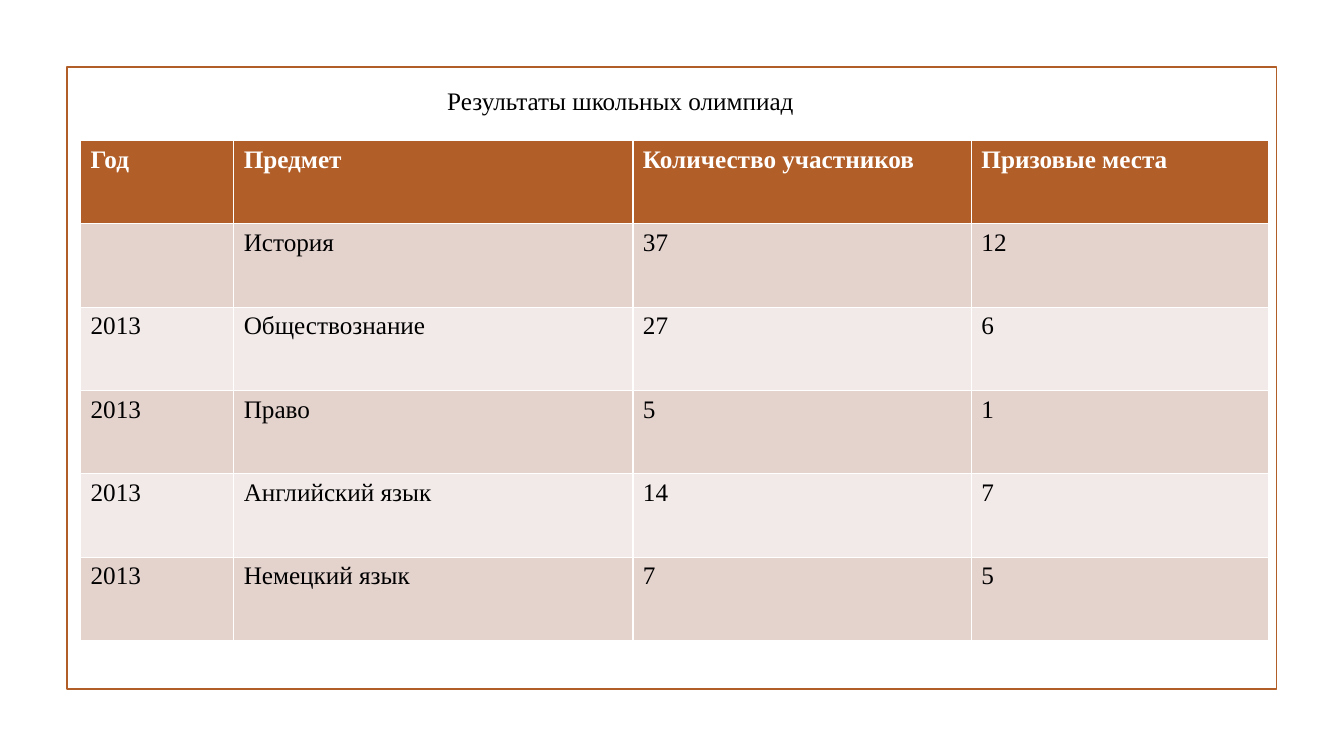
from dataclasses import dataclass

from pptx import Presentation
from pptx.dml.color import RGBColor
from pptx.enum.shapes import MSO_SHAPE
from pptx.enum.text import MSO_ANCHOR, MSO_AUTO_SIZE, PP_ALIGN
from pptx.util import Cm, Pt

RECTANGLE = MSO_SHAPE.RECTANGLE
LEFT = PP_ALIGN.LEFT
TOP = MSO_ANCHOR.TOP
FIT_SHAPE = MSO_AUTO_SIZE.SHAPE_TO_FIT_TEXT
TITLE_ONLY = 5


@dataclass(frozen=True)
class Theme:
    font: str = "Times New Roman"
    text_size: Pt = Pt(18)
    frame_width: Pt = Pt(1.25)
    accent: RGBColor = RGBColor(0xB1, 0x5E, 0x28)
    dark_band: RGBColor = RGBColor(0xE4, 0xD2, 0xCD)
    light_band: RGBColor = RGBColor(0xF2, 0xEA, 0xE8)
    text: RGBColor = RGBColor(0x00, 0x00, 0x00)
    header_text: RGBColor = RGBColor(0xFF, 0xFF, 0xFF)


THEME = Theme()

TITLE = "Результаты школьных олимпиад"
COLUMN_WIDTHS = [3.86, 10.06, 8.53, 7.49]
ROW_HEIGHT = 2.1
RESULTS = [
    ["Год", "Предмет", "Количество участников", "Призовые места"],
    ["", "История", "37", "12"],
    ["2013", "Обществознание", "27", "6"],
    ["2013", "Право", "5", "1"],
    ["2013", "Английский язык", "14", "7"],
    ["2013", "Немецкий язык", "7", "5"],
]


def add_text(paragraph, text, color, bold=False):
    run = paragraph.add_run()
    run.text = text
    run.font.name = THEME.font
    run.font.size = THEME.text_size
    run.font.bold = bold
    run.font.color.rgb = color


def add_frame(slide, left, top, width, height):
    frame = slide.shapes.add_shape(RECTANGLE, left, top, width, height)
    frame.shadow.inherit = False
    frame.fill.background()
    frame.line.color.rgb = THEME.accent
    frame.line.width = THEME.frame_width


def set_title(slide, text, left, top, width, height):
    title = slide.shapes.title
    title.left, title.top, title.width, title.height = left, top, width, height
    text_frame = title.text_frame
    text_frame.word_wrap = True
    text_frame.auto_size = FIT_SHAPE
    text_frame.vertical_anchor = TOP
    text_frame.margin_left = Cm(3.73)
    paragraph = text_frame.paragraphs[0]
    paragraph.alignment = LEFT
    add_text(paragraph, text, THEME.text)


def add_results_table(slide, rows, left, top):
    width, height = Cm(sum(COLUMN_WIDTHS)), Cm(ROW_HEIGHT * len(rows))
    table = slide.shapes.add_table(
        len(rows), len(COLUMN_WIDTHS), left, top, width, height
    ).table
    for column, column_width in zip(table.columns, COLUMN_WIDTHS):
        column.width = Cm(column_width)

    for row_index, values in enumerate(rows):
        table.rows[row_index].height = Cm(ROW_HEIGHT)
        is_header = row_index == 0
        band = THEME.dark_band if row_index % 2 else THEME.light_band
        for column_index, value in enumerate(values):
            cell = table.cell(row_index, column_index)
            cell.fill.solid()
            cell.fill.fore_color.rgb = THEME.accent if is_header else band
            if value:
                color = THEME.header_text if is_header else THEME.text
                add_text(cell.text_frame.paragraphs[0], value, color, is_header)


def main():
    presentation = Presentation()
    presentation.slide_width = Cm(33.87)
    presentation.slide_height = Cm(19.05)
    slide = presentation.slides.add_slide(presentation.slide_layouts[TITLE_ONLY])

    # Border around the content
    add_frame(slide, Cm(1.69), Cm(1.69), Cm(30.48), Cm(15.67))

    # Heading and results
    set_title(slide, TITLE, Cm(7.54), Cm(2.03), Cm(15.67), Cm(1.03))
    add_results_table(slide, RESULTS, Cm(2.03), Cm(3.54))

    presentation.save("out.pptx")


if __name__ == "__main__":
    main()
